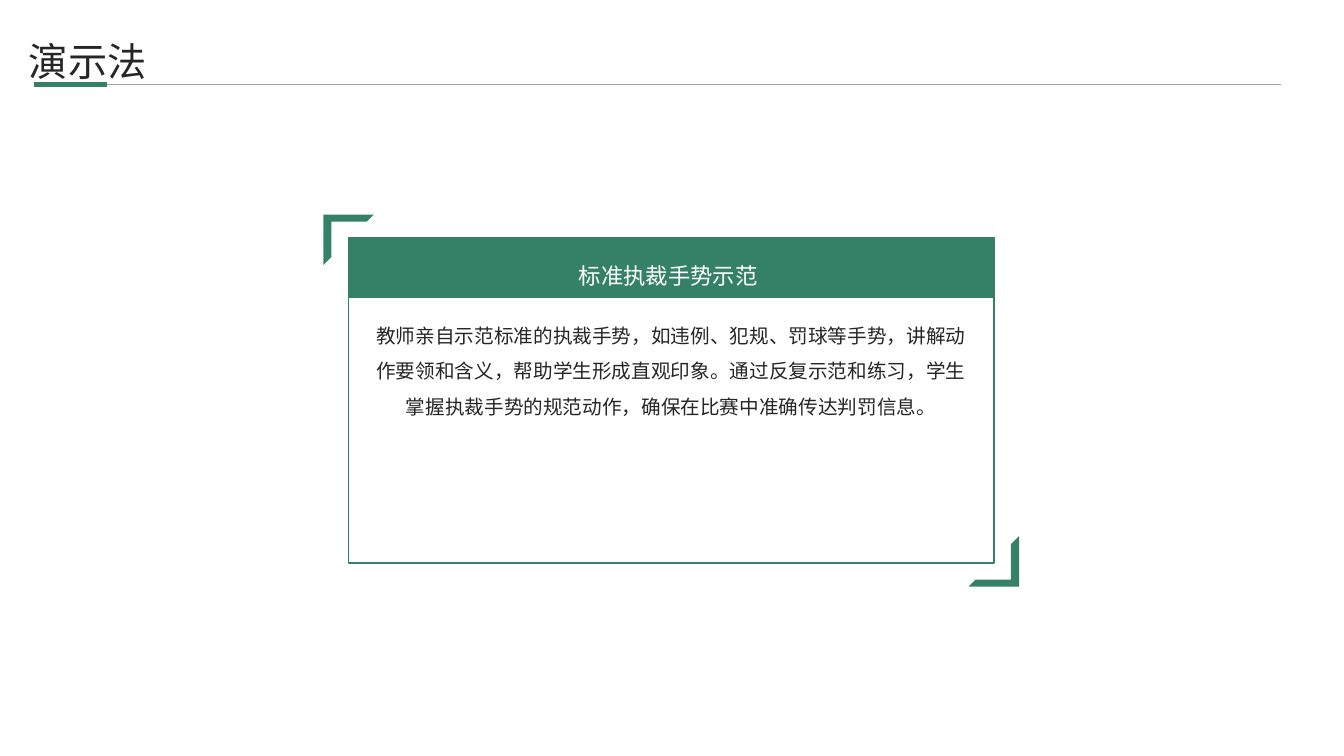
from dataclasses import dataclass

from lxml import etree
from pptx import Presentation
from pptx.dml.color import RGBColor
from pptx.enum.shapes import MSO_CONNECTOR, MSO_SHAPE
from pptx.enum.text import MSO_ANCHOR, MSO_AUTO_SIZE, PP_ALIGN
from pptx.oxml.ns import qn
from pptx.util import Cm, Pt

RECTANGLE = MSO_SHAPE.RECTANGLE
HALF_FRAME = MSO_SHAPE.HALF_FRAME
STRAIGHT = MSO_CONNECTOR.STRAIGHT
TOP, MIDDLE = MSO_ANCHOR.TOP, MSO_ANCHOR.MIDDLE
LEFT, CENTER = PP_ALIGN.LEFT, PP_ALIGN.CENTER
GROW = MSO_AUTO_SIZE.SHAPE_TO_FIT_TEXT
FIXED = MSO_AUTO_SIZE.NONE

FONT = "Noto Sans CJK SC"
COLORS = {"green": "358167", "white": "FFFFFF", "ink": "262626", "gray": "A6A6A6"}
TITLE_ONLY = 5


@dataclass(frozen=True)
class Box:
    """Position and size in centimetres."""
    left: float
    top: float
    width: float
    height: float

    def lengths(self):
        return Cm(self.left), Cm(self.top), Cm(self.width), Cm(self.height)


@dataclass(frozen=True)
class Panel:
    box: Box
    fill: str
    kind: int = RECTANGLE
    outline: str = ""
    rotation: int = 0
    adjustments: tuple = ()


@dataclass(frozen=True)
class Rule:
    """Horizontal line; lengths in centimetres, weight in points."""
    start: float
    end: float
    color: str
    weight: float


BRACKET_SIZE = 1.27
BRACKET_ADJUSTMENTS = (0.14, 0.16)
RULE_TOP = 2.13

PANELS = (
    Panel(Box(8.15, 5.41, BRACKET_SIZE, BRACKET_SIZE), "green", HALF_FRAME,
          adjustments=BRACKET_ADJUSTMENTS),
    Panel(Box(24.41, 13.51, BRACKET_SIZE, BRACKET_SIZE), "green", HALF_FRAME,
          rotation=180, adjustments=BRACKET_ADJUSTMENTS),
    Panel(Box(8.79, 5.99, 16.26, 8.2), "white", outline="green"),
    Panel(Box(8.79, 5.99, 16.26, 1.52), "green"),
)
RULES = (Rule(0.86, 32.28, "gray", 0.5), Rule(0.86, 2.69, "green", 3.5))

TITLE_BOX = Box(0.48, 0.69, 31.78, 1.35)
BODY_BOX = Box(9.27, 7.87, 15.29, 5.87)
HEADING_BOX = Box(9.27, 6.02, 15.14, 1.52)
BODY = (
    "教师亲自示范标准的执裁手势，如违例、犯规、罚球等手势，讲解动作要领和含义，"
    "帮助学生形成直观印象。通过反复示范和练习，学生掌握执裁手势的规范动作，"
    "确保在比赛中准确传达判罚信息。"
)


def rgb(name: str) -> RGBColor:
    return RGBColor.from_string(COLORS[name])


def write_text(shape, text: str, *, size: float, color: str, align=CENTER,
               anchor=TOP, spacing: float = 1.5, insets: tuple = (0, 0),
               auto_size=FIXED) -> None:
    """Fill a shape with one paragraph; insets are horizontal and vertical, in cm."""
    frame = shape.text_frame
    frame.word_wrap = True
    frame.auto_size = auto_size
    frame.vertical_anchor = anchor
    frame.margin_left = frame.margin_right = Cm(insets[0])
    frame.margin_top = frame.margin_bottom = Cm(insets[1])
    paragraph = frame.paragraphs[0]
    paragraph.alignment = align
    paragraph.line_spacing = spacing
    paragraph.space_before = Pt(0)
    run = paragraph.add_run()
    run.text = text
    run.font.size = Pt(size)
    run.font.name = FONT
    run.font.color.rgb = rgb(color)
    latin = run.font._element.find(qn("a:latin"))
    east_asian = etree.Element(qn("a:ea"), typeface=FONT)
    latin.addnext(east_asian)


def add_panel(slide, panel: Panel) -> None:
    shape = slide.shapes.add_shape(panel.kind, *panel.box.lengths())
    shape.shadow.inherit = False
    shape.rotation = panel.rotation
    for index, value in enumerate(panel.adjustments):
        shape.adjustments[index] = value
    shape.fill.solid()
    shape.fill.fore_color.rgb = rgb(panel.fill)
    if panel.outline:
        shape.line.color.rgb = rgb(panel.outline)
        shape.line.width = Pt(1)
    else:
        shape.line.fill.background()


def add_rule(slide, rule: Rule) -> None:
    connector = slide.shapes.add_connector(
        STRAIGHT, Cm(rule.start), Cm(RULE_TOP), Cm(rule.end), Cm(RULE_TOP))
    connector.line.color.rgb = rgb(rule.color)
    connector.line.width = Pt(rule.weight)
    etree.SubElement(connector._element.spPr, qn("a:effectLst"))


def main() -> None:
    presentation = Presentation()
    presentation.slide_width, presentation.slide_height = Cm(33.87), Cm(19.05)
    slide = presentation.slides.add_slide(presentation.slide_layouts[TITLE_ONLY])

    title = slide.shapes.title
    title.left, title.top, title.width, title.height = TITLE_BOX.lengths()
    write_text(title, "演示法", size=28, color="ink", align=LEFT, spacing=1.1,
               insets=(0.25, 0.13), auto_size=GROW)

    for panel in PANELS:
        add_panel(slide, panel)
    body = slide.shapes.add_textbox(*BODY_BOX.lengths())
    write_text(body, BODY, size=14, color="ink")
    heading = slide.shapes.add_textbox(*HEADING_BOX.lengths())
    write_text(heading, "标准执裁手势示范", size=16, color="white", anchor=MIDDLE)
    for rule in RULES:
        add_rule(slide, rule)

    presentation.save("out.pptx")


if __name__ == "__main__":
    main()
